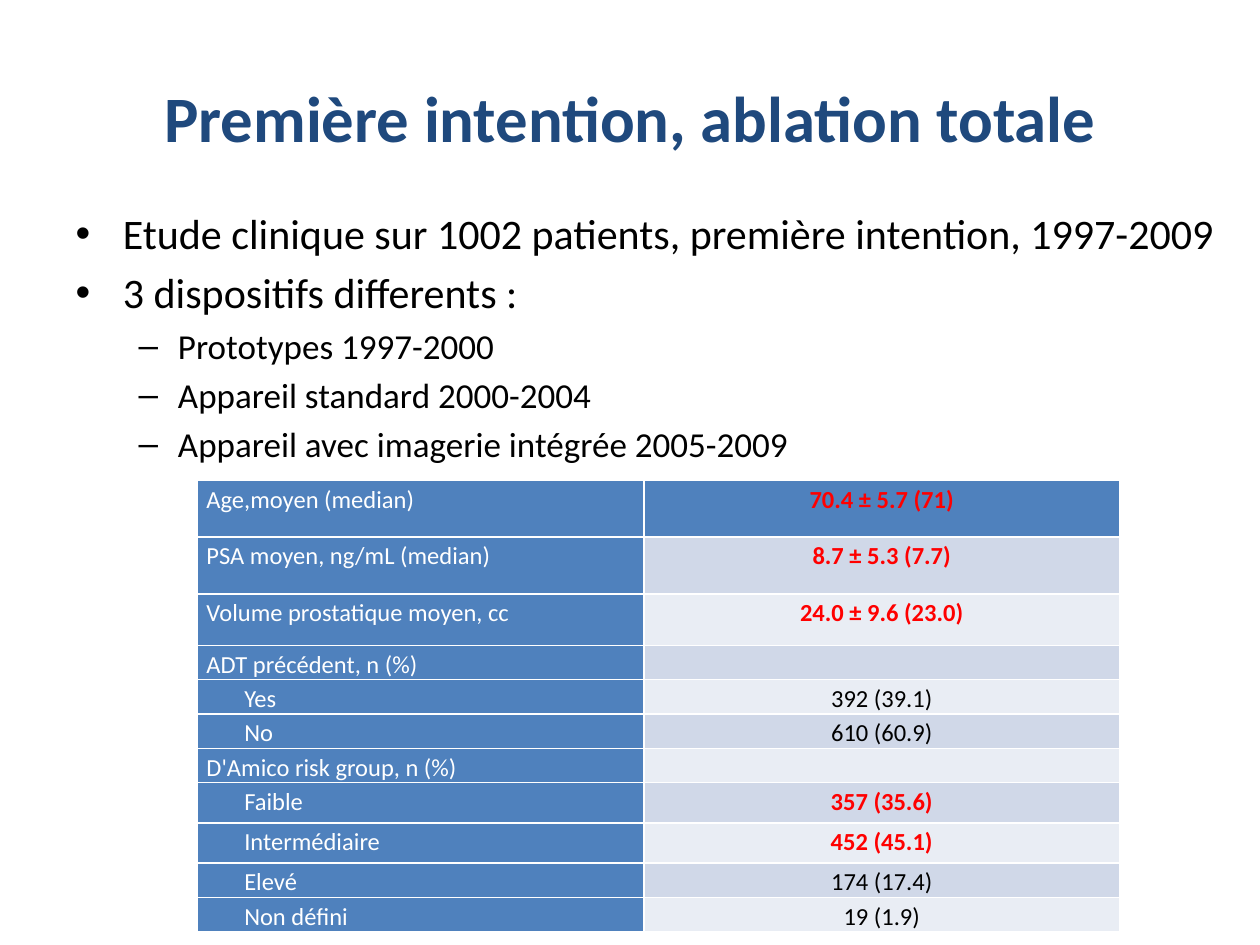
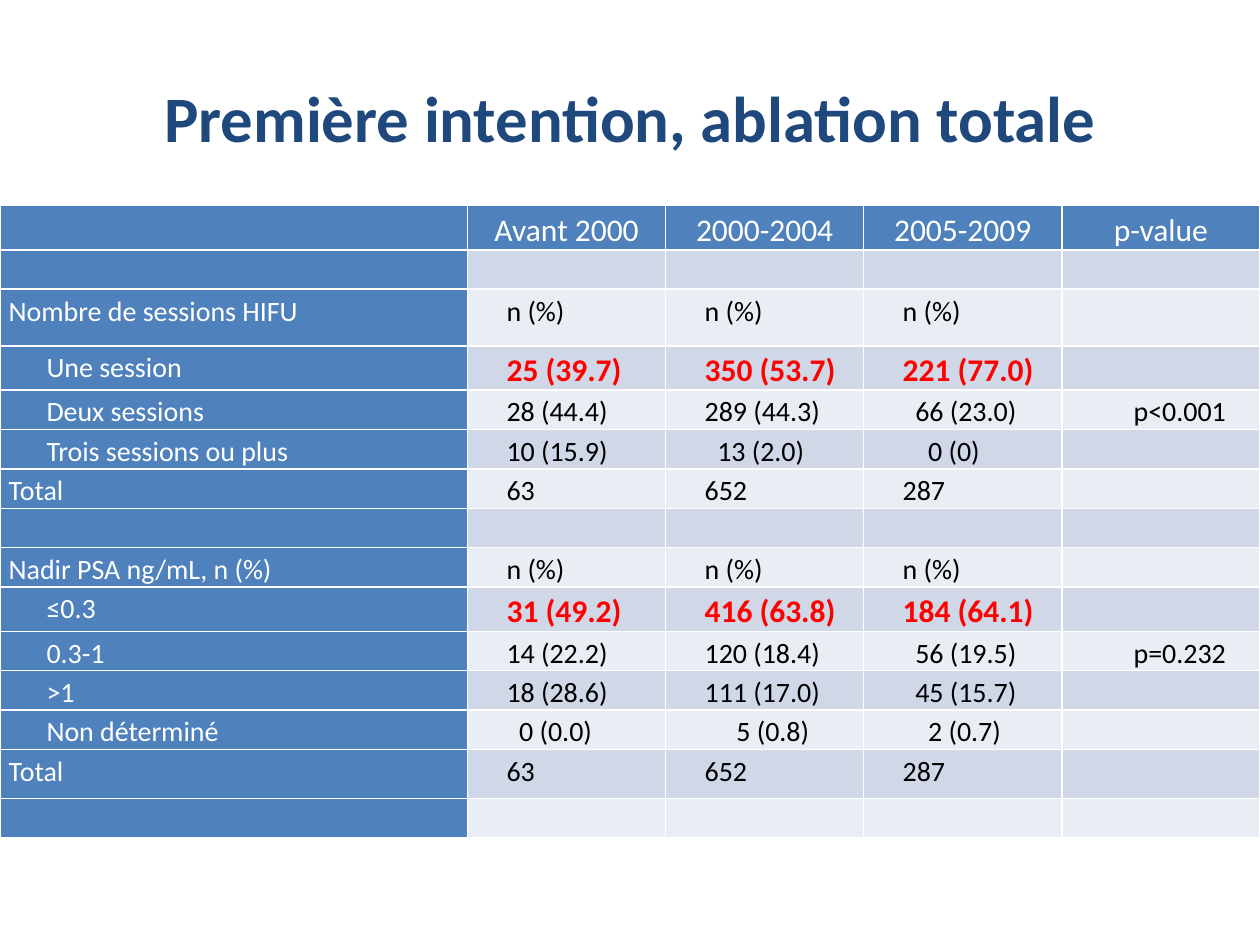
from pptx import Presentation
from pptx.dml.color import RGBColor
from pptx.enum import text
from pptx.util import Pt

# ---- Content ----
TITLE = "Première intention, ablation totale"

STUDY = [  # (level, text)
    (0, "Etude clinique sur 1002 patients, première intention, 1997-2009"),
    (0, "3 dispositifs differents :"),
    (1, "Prototypes 1997-2000"),
    (1, "Appareil standard 2000-2004"),
    (1, "Appareil avec imagerie intégrée 2005-2009"),
]

PATIENTS = [  # (label, value, row height, label is indented, value is key)
    ("Age,moyen (median)", "70.4 ± 5.7 (71)", 32.4, False, True),
    ("PSA moyen, ng/mL (median)", "8.7 ± 5.3 (7.7)", 32.4, False, True),
    ("Volume prostatique moyen, cc", "24.0 ± 9.6 (23.0)", 29.5, False, True),
    ("ADT précédent, n (%)", "", 19.6, False, False),
    ("Yes", "392 (39.1)", 19.6, True, False),
    ("No", "610 (60.9)", 19.6, True, False),
    ("D'Amico risk group, n (%)", "", 19.6, False, False),
    ("Faible", "357 (35.6)", 23, True, True),
    ("Intermédiaire", "452 (45.1)", 23, True, True),
    ("Elevé", "174 (17.4)", 19.6, True, False),
    ("Non défini", "19 (1.9)", 19.6, True, False),
]

PERIODS = ["", "Avant 2000", "2000-2004", "2005-2009", "p-value"]
UNITS = ["n (%)"] * 3
TOTALS = ["63", "652", "287"]
BLANK = ("", [""] * 3, "", 22.5, False, False)
OUTCOMES = [  # (label, values per period, p-value, row height, indented, key)
    BLANK,
    ("Nombre de sessions HIFU", UNITS, "", 32.4, False, False),
    ("Une session", ["25 (39.7)", "350 (53.7)", "221 (77.0)"], "", 25.2, True, True),
    ("Deux sessions", ["28 (44.4)", "289 (44.3)", "66 (23.0)"], "p<0.001", 22.5, True, False),
    ("Trois sessions ou plus", ["10 (15.9)", "13 (2.0)", "0 (0)"], "", 22.5, True, False),
    ("Total", TOTALS, "", 22.5, False, False),
    BLANK,
    ("Nadir PSA ng/mL, n (%)", UNITS, "", 22.5, False, False),
    ("≤0.3", ["31 (49.2)", "416 (63.8)", "184 (64.1)"], "", 25.2, True, True),
    ("0.3-1", ["14 (22.2)", "120 (18.4)", "56 (19.5)"], "p=0.232", 22.5, True, False),
    (">1", ["18 (28.6)", "111 (17.0)", "45 (15.7)"], "", 22.5, True, False),
    ("Non déterminé", ["0 (0.0)", "5 (0.8)", "2 (0.7)"], "", 22.5, True, False),
    ("Total", TOTALS, "", 28.1, False, False),
    BLANK,
]
# Extra indent that lines up the shorter numbers of a column
SHORT_NUMBERS = {"66 (23.0)": 7.2, "56 (19.5)": 7.2, "45 (15.7)": 7.2, "13 (2.0)": 7.2,
                 "0 (0.0)": 7.2, "0 (0)": 14.5, "2 (0.7)": 14.5, "5 (0.8)": 18.1}

# ---- Shared style ----
FONT = "Calibri"
COLORS = {"title": "1F497D", "body": "000000", "head": "4F81BD", "on_head": "FFFFFF",
          "key": "FF0000", "odd": "D0D8E8", "even": "E9EDF4"}
LABEL_INDENT, VALUE_INDENT = 21.6, 17.3
CENTER = text.PP_ALIGN.CENTER


def rgb(name):
    return RGBColor.from_string(COLORS[name])


def style(paragraph, size, color, bold=False):
    for run in paragraph.runs:
        run.font.name, run.font.size, run.font.bold = FONT, Pt(size), bold
        run.font.color.rgb = rgb(color)


def place(part, left, top, width, height):
    part.left, part.top, part.width, part.height = map(Pt, (left, top, width, height))


def add_titled_slide(deck, layout):
    slide = deck.slides.add_slide(deck.slide_layouts[layout])
    title = slide.shapes.title
    place(title, 36, 21.6, 648, 90)
    title.text_frame.text = TITLE
    title.text_frame.auto_size = text.MSO_AUTO_SIZE.NONE
    title.text_frame.vertical_anchor = text.MSO_ANCHOR.MIDDLE
    heading = title.text_frame.paragraphs[0]
    heading.alignment = CENTER
    style(heading, 37, "title", True)
    return slide


def add_grid(slide, left, top, widths, heights):
    grid = slide.shapes.add_table(len(heights), len(widths), Pt(left), Pt(top),
                                  Pt(sum(widths)), Pt(sum(heights))).table
    grid.first_col = True
    for column, width in zip(grid.columns, widths):
        column.width = Pt(width)
    for row, height in zip(grid.rows, heights):
        row.height = Pt(height)
    return grid


def fill_cell(grid, row, col, words, size, color, bold=False, indent=0, align=None):
    cell = grid.cell(row, col)
    band = "head" if row == 0 or col == 0 else "odd" if row % 2 else "even"
    cell.fill.solid()
    cell.fill.fore_color.rgb = rgb(band)
    cell.margin_left = cell.margin_right = Pt(5)
    cell.margin_top = cell.margin_bottom = 0
    paragraph = cell.text_frame.paragraphs[0]
    paragraph.text = words
    paragraph.line_spacing = 1.15
    paragraph.alignment = align
    if indent:
        paragraph._p.get_or_add_pPr().set("marL", str(Pt(indent)))
    if words:
        style(paragraph, size, color, bold)
    else:  # keeps an empty row as low as a filled one
        paragraph._p.get_or_add_endParaRPr().set("sz", str(size * 100))


def add_study_slide(deck):
    slide = add_titled_slide(deck, 1)
    study = slide.placeholders[1]
    place(study, 36, 115.2, 669.6, 356.4)
    frame = study.text_frame
    frame.text = "\n".join(words for _, words in STUDY)
    frame.auto_size = text.MSO_AUTO_SIZE.NONE
    for paragraph, (level, _) in zip(frame.paragraphs, STUDY):
        paragraph.level = level
        style(paragraph, 20 if level else 24, "body")

    # Patient characteristics
    grid = add_grid(slide, 113, 274.5, [254.9, 272], [row[2] for row in PATIENTS])
    for r, (label, value, _, indented, key) in enumerate(PATIENTS):
        fill_cell(grid, r, 0, label, 14, "on_head", indent=LABEL_INDENT * indented)
        fill_cell(grid, r, 1, value, 14, "key" if key else "body", key, align=CENTER)


def add_outcome_slide(deck):
    slide = add_titled_slide(deck, 5)
    period_width = 113.2
    grid = add_grid(slide, 0, 117.5, [720 - 4 * period_width] + [period_width] * 4,
                    [25.2] + [row[3] for row in OUTCOMES])
    for c, period in enumerate(PERIODS):
        fill_cell(grid, 0, c, period, 18, "on_head", align=CENTER)
    for r, (label, values, p_value, _, indented, key) in enumerate(OUTCOMES, 1):
        fill_cell(grid, r, 0, label, 16, "on_head", indent=LABEL_INDENT * indented)
        for c, value in enumerate(values, 1):
            fill_cell(grid, r, c, value, 18 if key else 16, "key" if key else "body", key,
                      VALUE_INDENT + SHORT_NUMBERS.get(value, 0))
        fill_cell(grid, r, 4, p_value, 16, "body", indent=LABEL_INDENT, align=CENTER)


def main():
    deck = Presentation()
    deck.slide_width, deck.slide_height = Pt(720), Pt(540)
    add_study_slide(deck)
    add_outcome_slide(deck)
    deck.save("out.pptx")


if __name__ == "__main__":
    main()
